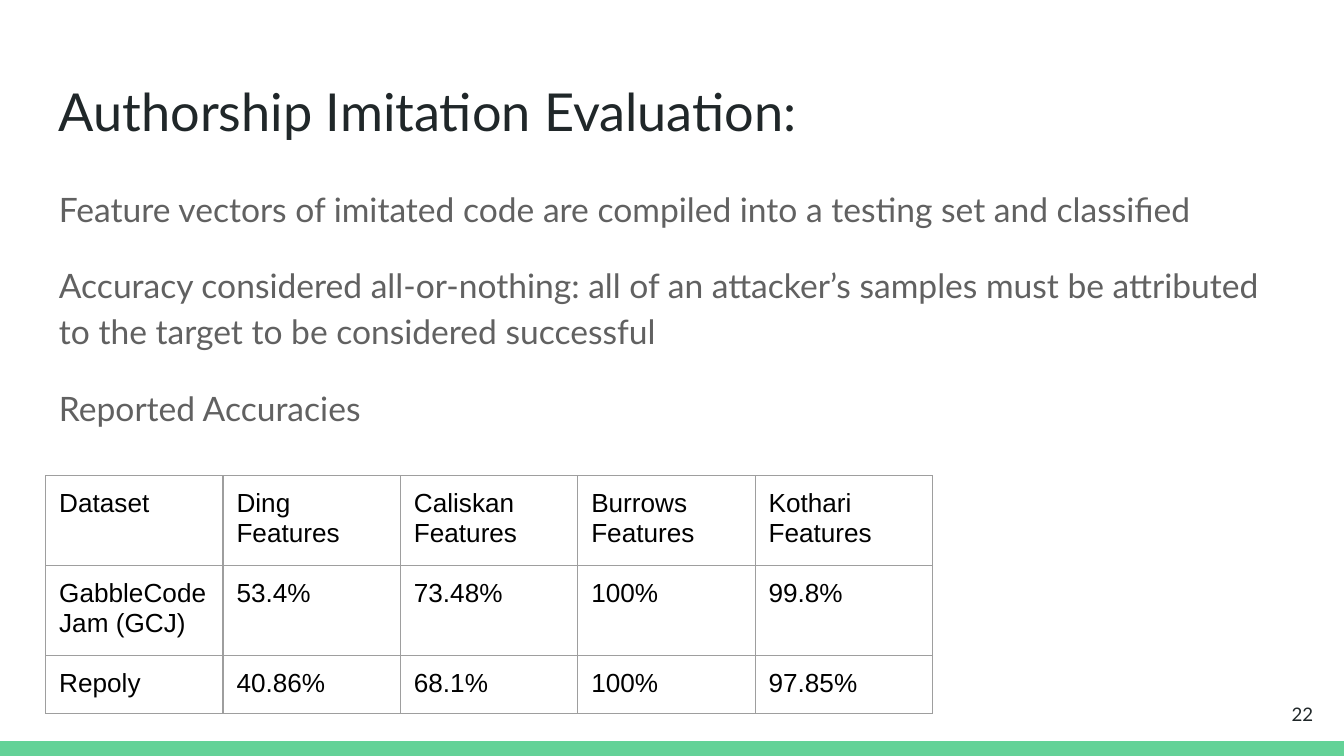
from lxml import etree
from pptx import Presentation
from pptx.dml.color import RGBColor
from pptx.enum.shapes import MSO_SHAPE
from pptx.enum.text import MSO_ANCHOR, PP_ALIGN
from pptx.oxml.ns import qn
from pptx.util import Inches, Pt

RECTANGLE = MSO_SHAPE.RECTANGLE
TOP, MIDDLE = MSO_ANCHOR.TOP, MSO_ANCHOR.MIDDLE
LEFT, RIGHT = PP_ALIGN.LEFT, PP_ALIGN.RIGHT

GREEN = RGBColor(0x63, 0xD2, 0x97)
INK = RGBColor(0x20, 0x27, 0x29)
GRAY = RGBColor(0x61, 0x61, 0x61)
BLACK = RGBColor(0, 0, 0)
WHITE = RGBColor(0xFF, 0xFF, 0xFF)
RULE = "9E9E9E"

WIDTH = 10
HEIGHT = WIDTH * 9 / 16
MARGIN = 0.34
CONTENT_WIDTH = WIDTH - 2 * MARGIN
BAND_HEIGHT = 0.11
ROW_HEIGHT = 0.42
INSET = Inches(0.1)

STATEMENTS = [
    "Feature vectors of imitated code are compiled into a testing set and classified",
    "Accuracy considered all-or-nothing: all of an attacker’s samples must be "
    "attributed to the target to be considered successful",
    "Reported Accuracies",
]
ACCURACIES = [
    ["Dataset", "Ding Features", "Caliskan Features", "Burrows Features", "Kothari Features"],
    ["GabbleCodeJam (GCJ)", "53.4%", "73.48%", "100%", "99.8%"],
    ["Repoly", "40.86%", "68.1%", "100%", "97.85%"],
]


def write(paragraph, text, size, color, font="Lato", align=LEFT,
          spacing=1.0, before=0, after=0):
    paragraph.alignment = align
    paragraph.line_spacing = spacing
    paragraph.space_before = Pt(before)
    paragraph.space_after = Pt(after)
    run = paragraph.add_run()
    run.text = text
    run.font.size = Pt(size)
    run.font.name = font
    run.font.color.rgb = color


def add_frame(slide, box, anchor=TOP):
    frame = slide.shapes.add_textbox(*map(Inches, box)).text_frame
    frame.word_wrap = True
    frame.vertical_anchor = anchor
    frame.margin_left = frame.margin_right = INSET
    frame.margin_top = frame.margin_bottom = INSET
    return frame


def add_footer_band(slide, box):
    band = slide.shapes.add_shape(RECTANGLE, *map(Inches, box))
    band.shadow.inherit = False
    band.fill.solid()
    band.fill.fore_color.rgb = GREEN
    band.line.fill.background()


def add_title(slide, box):
    frame = add_frame(slide, box)
    write(frame.paragraphs[0], "Authorship Imitation Evaluation:", size=28, color=INK)


def add_statements(slide, box):
    frame = add_frame(slide, box)
    last = len(STATEMENTS) - 1
    for index, statement in enumerate(STATEMENTS):
        paragraph = frame.add_paragraph() if index else frame.paragraphs[0]
        write(paragraph, statement, size=18, color=GRAY, spacing=1.15,
              before=16 if index else 0, after=16 if index == last else 0)


def add_page_number(slide, box):
    frame = add_frame(slide, box, anchor=MIDDLE)
    write(frame.paragraphs[0], "22", size=10, color=INK, align=RIGHT)


def set_borders(cell):
    properties = cell._tc.get_or_add_tcPr()
    for position, side in enumerate(("a:lnL", "a:lnR", "a:lnT", "a:lnB")):
        border = etree.Element(qn(side), w=str(Pt(0.75)))
        fill = etree.SubElement(border, qn("a:solidFill"))
        etree.SubElement(fill, qn("a:srgbClr"), val=RULE)
        properties.insert(position, border)


def add_accuracies(slide, box):
    table = slide.shapes.add_table(
        len(ACCURACIES), len(ACCURACIES[0]), *map(Inches, box)).table
    table.first_row = table.horz_banding = False
    for column in table.columns:
        column.width = Inches(box[2] / len(ACCURACIES[0]))
    for row, values in zip(table.rows, ACCURACIES):
        row.height = Inches(box[3] / len(ACCURACIES))
        for cell, value in zip(row.cells, values):
            cell.margin_left = cell.margin_right = INSET
            cell.margin_top = cell.margin_bottom = INSET
            cell.fill.solid()
            cell.fill.fore_color.rgb = WHITE
            set_borders(cell)
            write(cell.text_frame.paragraphs[0], value, size=14, color=BLACK, font="Arial")


def main():
    deck = Presentation()
    deck.slide_width, deck.slide_height = Inches(WIDTH), Inches(HEIGHT)
    slide = deck.slides.add_slide(deck.slide_layouts[6])
    add_footer_band(slide, (0, HEIGHT - BAND_HEIGHT, WIDTH, BAND_HEIGHT))
    add_title(slide, (MARGIN, 0.49, CONTENT_WIDTH, 0.63))
    add_statements(slide, (MARGIN, 1.26, CONTENT_WIDTH, 3.74))
    add_accuracies(slide, (MARGIN, 3.54, 6.6, ROW_HEIGHT * len(ACCURACIES)))
    add_page_number(slide, (9.27, 5.1, 0.6, 0.43))
    deck.save("out.pptx")


if __name__ == "__main__":
    main()
